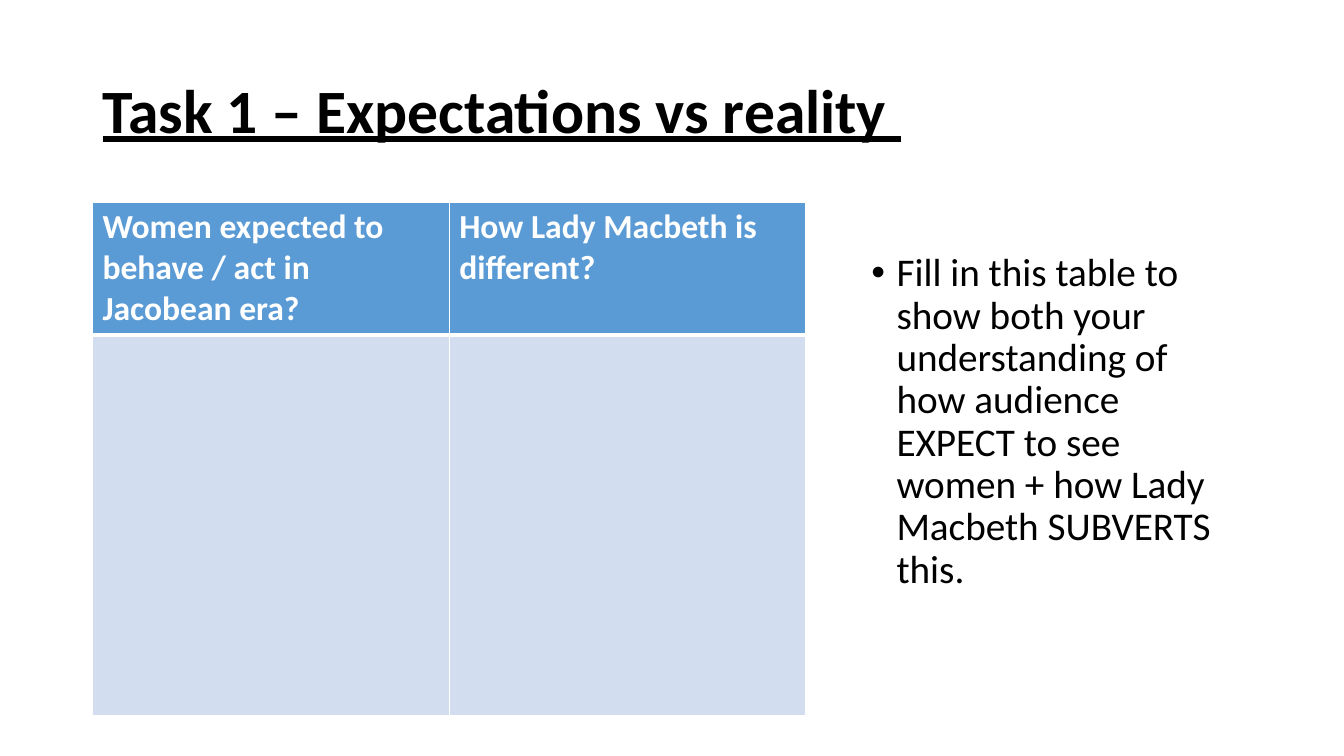
from lxml import etree
from pptx import Presentation
from pptx.dml.color import RGBColor
from pptx.enum.text import MSO_ANCHOR, MSO_AUTO_SIZE, PP_ALIGN
from pptx.oxml.ns import qn
from pptx.util import Cm, Pt

LEFT = PP_ALIGN.LEFT
MIDDLE = MSO_ANCHOR.MIDDLE
NO_AUTOFIT = MSO_AUTO_SIZE.NONE

BLACK = RGBColor(0x00, 0x00, 0x00)
WHITE = RGBColor(0xFF, 0xFF, 0xFF)
HEADER_BLUE = RGBColor(0x5B, 0x9B, 0xD5)
PALE_BLUE = RGBColor(0xD2, 0xDE, 0xEF)

FONT = "Calibri"
TITLE_ONLY = 5
HEADINGS = ["Women expected to behave / act in Jacobean era?",
            "How Lady Macbeth is different?"]


def add_run(p, text, size, color, bold=False):
    r = p.add_run()
    r.text = text
    r.font.name = FONT
    r.font.size = Pt(size)
    r.font.bold = bold
    r.font.color.rgb = color
    return r


def set_borders(cell, top, bottom):
    """Give a cell white borders: 1 pt at the sides, the given points above and below."""
    tcPr = cell._tc.get_or_add_tcPr()
    widths = {"a:lnL": 1, "a:lnR": 1, "a:lnT": top, "a:lnB": bottom}
    for i, (tag, width) in enumerate(widths.items()):
        ln = etree.Element(qn(tag), w=str(Pt(width)))
        fill = etree.SubElement(ln, qn("a:solidFill"))
        etree.SubElement(fill, qn("a:srgbClr"), val=str(WHITE))
        tcPr.insert(i, ln)


def place_title(s, left, top, width, height):
    title = s.shapes.title
    title.left, title.top, title.width, title.height = left, top, width, height
    tf = title.text_frame
    tf.auto_size = NO_AUTOFIT
    tf.vertical_anchor = MIDDLE
    p = tf.paragraphs[0]
    p.alignment = LEFT
    p.line_spacing = 0.9
    r = add_run(p, "Task 1 – Expectations vs reality ", 44, BLACK, bold=True)
    r.font.underline = True


def add_expectations_table(s, left, top, width, height):
    header_height = Cm(3.3)
    table = s.shapes.add_table(2, len(HEADINGS), left, top, width, height).table
    table.horz_banding = False
    table.rows[0].height = header_height
    table.rows[1].height = height - header_height
    for col, heading in enumerate(HEADINGS):
        table.columns[col].width = width // len(HEADINGS)
        header, answer = table.cell(0, col), table.cell(1, col)
        add_run(header.text_frame.paragraphs[0], heading, 24, WHITE, bold=True)
        for cell, color, borders in ((header, HEADER_BLUE, (1, 3)),
                                     (answer, PALE_BLUE, (3, 1))):
            cell.fill.solid()
            cell.fill.fore_color.rgb = color
            set_borders(cell, *borders)


def add_instruction(s, left, top, width, height):
    tf = s.shapes.add_textbox(left, top, width, height).text_frame
    tf.word_wrap = True
    p = tf.paragraphs[0]
    p.line_spacing = 0.9
    p.space_before = Pt(10)
    add_run(p, "Fill in this table to show both your understanding of how audience "
               "EXPECT to see women + how Lady Macbeth SUBVERTS this.", 28, BLACK)
    pPr = p._p.get_or_add_pPr()
    indent = Pt(18)
    pPr.set("marL", str(indent))
    pPr.set("indent", str(-indent))
    etree.SubElement(pPr, qn("a:buFont"), typeface="Arial")
    etree.SubElement(pPr, qn("a:buChar"), char="•")


def main():
    prs = Presentation()
    prs.slide_width, prs.slide_height = Cm(33.87), Cm(19.05)
    s = prs.slides.add_slide(prs.slide_layouts[TITLE_ONLY])
    margin = Cm(2.33)
    place_title(s, margin, Cm(1.01), prs.slide_width - 2 * margin, Cm(3.68))
    add_expectations_table(s, margin, Cm(5.09), Cm(17.98), Cm(12.88))
    add_instruction(s, Cm(21.71), Cm(6.25), Cm(9.83), Cm(12.09))
    prs.save("out.pptx")


if __name__ == "__main__":
    main()
